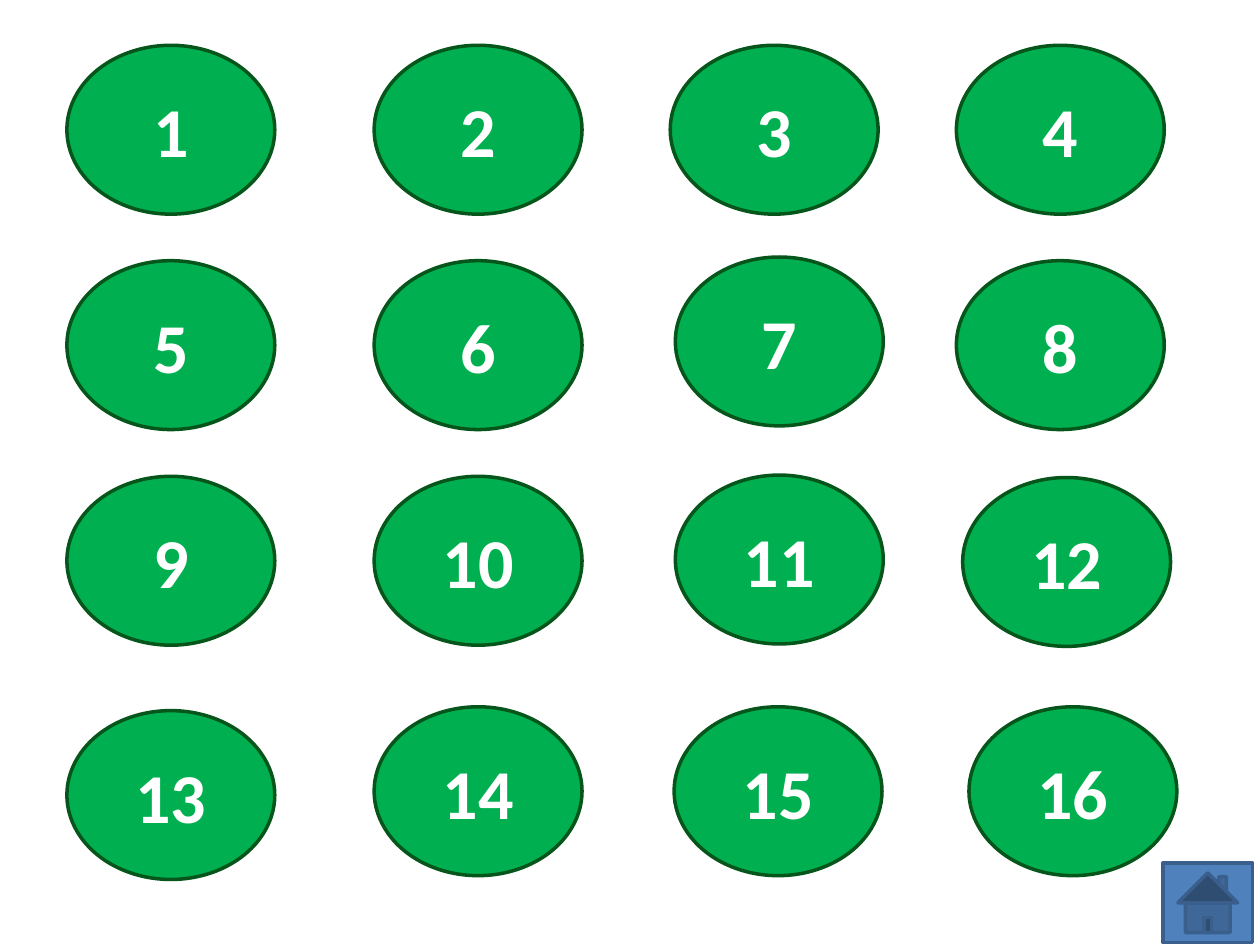
"""Build a board of sixteen numbered ovals with a home button."""
from typing import NamedTuple

from pptx import Presentation
from pptx.dml.color import RGBColor as RGB
from pptx.enum.shapes import MSO_SHAPE as SHAPE
from pptx.enum.text import MSO_ANCHOR as ANCHOR, PP_ALIGN as ALIGN
from pptx.util import Pt

COLORS = {
    "oval": "00B050",
    "oval_line": "06561B",
    "home": "4F81BD",
    "home_line": "3A5F8C",
    "number": "FFFFFF",
}
COLUMNS = (38.2, 213.8, 385.9, 546.5)
ROWS = (25.9, 149, 272.2, 403.9)
OVAL_SIZE = (118.8, 96.5)
NUDGES = {
    3: (-2.9, 0),
    7: (0, -2.1),
    11: (0, -0.7),
    12: (3.6, 0.7),
    13: (0, 2.2),
    15: (-0.7, 0),
    16: (7.2, 0),
}


class Button(NamedTuple):
    """A filled shape, placed in points, with an optional label."""
    kind: SHAPE
    left: float
    top: float
    width: float
    height: float
    fill: str
    line: str
    label: str = ""


def number_button(number: int) -> Button:
    """Place a numbered oval on the grid."""
    row, col = divmod(number - 1, len(COLUMNS))
    dx, dy = NUDGES.get(number, (0, 0))
    return Button(SHAPE.OVAL, COLUMNS[col] + dx, ROWS[row] + dy, *OVAL_SIZE,
                  "oval", "oval_line", str(number))


def draw_button(s, button: Button) -> None:
    """Draw one button on the slide."""
    sp = s.shapes.add_shape(button.kind, Pt(button.left), Pt(button.top),
                            Pt(button.width), Pt(button.height))
    sp.shadow.inherit = False
    sp.fill.solid()
    sp.fill.fore_color.rgb = RGB.from_string(COLORS[button.fill])
    sp.line.color.rgb = RGB.from_string(COLORS[button.line])
    sp.line.width = Pt(2)
    if button.label:
        tf = sp.text_frame
        tf.vertical_anchor = ANCHOR.MIDDLE
        p = tf.paragraphs[0]
        p.alignment = ALIGN.CENTER
        r = p.add_run()
        r.text = button.label
        r.font.name = "Calibri"
        r.font.size = Pt(40)
        r.font.bold = True
        r.font.color.rgb = RGB.from_string(COLORS["number"])


def main() -> None:
    """Build and save the slide."""
    prs = Presentation()
    prs.slide_width, prs.slide_height = Pt(720), Pt(540)
    s = prs.slides.add_slide(prs.slide_layouts[6])
    for number in range(1, len(COLUMNS) * len(ROWS) + 1):
        draw_button(s, number_button(number))
    draw_button(s, Button(SHAPE.ACTION_BUTTON_HOME, 664.6, 493.2, 51.1, 45.4,
                          "home", "home_line"))
    prs.save("out.pptx")


if __name__ == "__main__":
    main()
